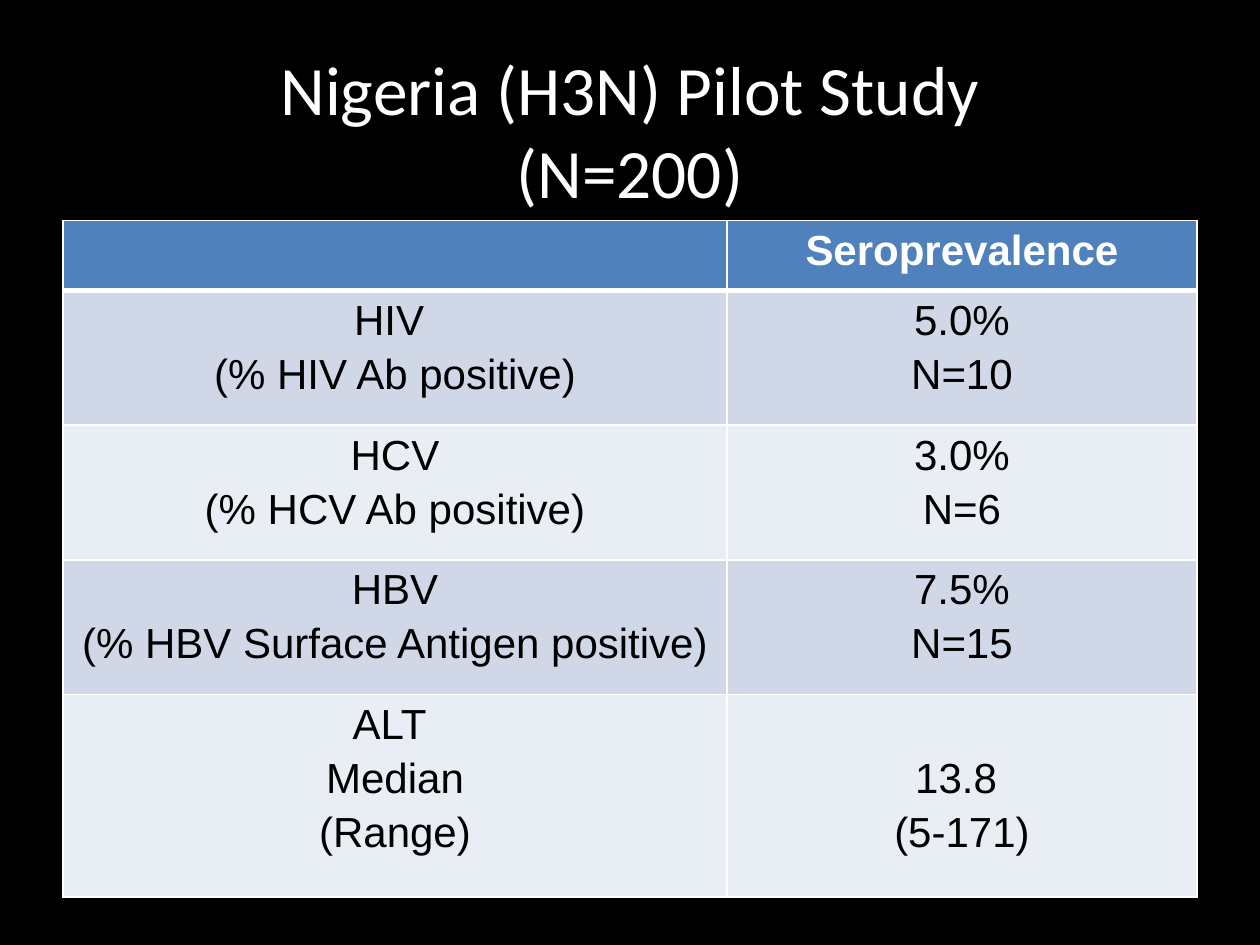
from lxml.etree import SubElement
from pptx import Presentation
from pptx.dml.color import RGBColor
from pptx.enum.text import MSO_ANCHOR, MSO_AUTO_SIZE, PP_ALIGN
from pptx.oxml.ns import qn
from pptx.util import Pt

# Content
TITLE = ("Nigeria (H3N) Pilot Study", "(N=200)")
ROWS = [
    ([], ["Seroprevalence"]),
    (["HIV ", "(% HIV Ab positive)"], ["5.0%", "N=10"]),
    (["HCV", "(% HCV Ab positive)"], ["3.0%", "N=6"]),
    (["HBV", "(% HBV Surface Antigen positive)"], ["7.5%", "N=15"]),
    (["ALT ", "Median", "(Range)"], ["13.8 ", "(5-171)"]),
]

# Theme and measures, in points
THEME = {
    "background": "000000", "white": "FFFFFF", "text": "000000",
    "header": "4F81BD", "bands": ("D0D8E8", "E9EDF4"),
    "title_font": "Calibri", "table_font": "Arial",
    "title_size": 39.6, "table_size": 24,
}
TITLE_BOX = (36, 21.6, 648, 90)
TABLE_LEFT, TABLE_TOP = 36, 126
COLUMN_WIDTHS = (379.4, 268.6)
ROW_HEIGHTS = (40, 77, 77, 77, 115.5)
LINE_PITCH = 30.6
BORDER, HEADER_RULE = 1, 3


def color(name):
    return RGBColor.from_string(name)


def set_all(target, values):
    for name, value in values.items():
        setattr(target, name, value)


def format_font(font, face, size, shade, bold=False):
    set_all(font, {"name": face, "size": Pt(size), "bold": bold})
    font.color.rgb = color(shade)


def add_borders(cell, bottom_width, top_width):
    """Draw the four cell edges, which must precede the fill."""
    properties = cell._tc.get_or_add_tcPr()
    widths = {"a:lnL": BORDER, "a:lnR": BORDER,
              "a:lnT": top_width, "a:lnB": bottom_width}
    for tag, width in widths.items():
        edge = SubElement(properties, qn(tag), w=str(int(Pt(width))))
        fill = SubElement(edge, qn("a:solidFill"))
        SubElement(fill, qn("a:srgbClr"), val=THEME["white"])


def fill_cell(cell, lines, row_index, lines_skipped):
    header = row_index == 0
    add_borders(cell, HEADER_RULE if header else BORDER,
                HEADER_RULE if row_index == 1 else BORDER)
    cell.fill.solid()
    band = THEME["bands"][(row_index - 1) % 2]
    cell.fill.fore_color.rgb = color(THEME["header"] if header else band)
    set_all(cell, {"margin_left": Pt(5), "margin_right": Pt(5),
                   "margin_top": Pt(lines_skipped * LINE_PITCH),
                   "margin_bottom": 0, "vertical_anchor": MSO_ANCHOR.TOP})
    frame = cell.text_frame
    frame.text = "\n".join(lines)
    for para in frame.paragraphs:
        set_all(para, {"alignment": PP_ALIGN.CENTER, "line_spacing": 1.15})
        for span in para.runs:
            format_font(span.font, THEME["table_font"], THEME["table_size"],
                        THEME["white" if header else "text"], header)


def add_title(page):
    box = page.shapes.title
    set_all(box, dict(zip(("left", "top", "width", "height"), map(Pt, TITLE_BOX))))
    frame = box.text_frame
    frame.text = "\v".join(TITLE)
    set_all(frame, {"word_wrap": True, "auto_size": MSO_AUTO_SIZE.NONE,
                    "vertical_anchor": MSO_ANCHOR.TOP, "margin_top": Pt(5)})
    para = frame.paragraphs[0]
    para.alignment = PP_ALIGN.CENTER
    for span in para.runs:
        format_font(span.font, THEME["title_font"], THEME["title_size"], THEME["white"])


def add_results(page):
    table = page.shapes.add_table(
        len(ROWS), len(COLUMN_WIDTHS), Pt(TABLE_LEFT), Pt(TABLE_TOP),
        Pt(sum(COLUMN_WIDTHS)), Pt(sum(ROW_HEIGHTS))).table
    for column, width in zip(table.columns, COLUMN_WIDTHS):
        column.width = Pt(width)
    for row_index, (row, height) in enumerate(zip(ROWS, ROW_HEIGHTS)):
        table.rows[row_index].height = Pt(height)
        for column_index, lines in enumerate(row):
            # Values line up with the last lines of their label
            skipped = max(0, len(row[0]) - len(lines))
            fill_cell(table.cell(row_index, column_index), lines, row_index, skipped)


def main():
    deck = Presentation()
    set_all(deck, {"slide_width": Pt(720), "slide_height": Pt(540)})
    page = deck.slides.add_slide(deck.slide_layouts[5])
    page.background.fill.solid()
    page.background.fill.fore_color.rgb = color(THEME["background"])
    add_title(page)
    add_results(page)
    deck.save("out.pptx")


if __name__ == "__main__":
    main()
